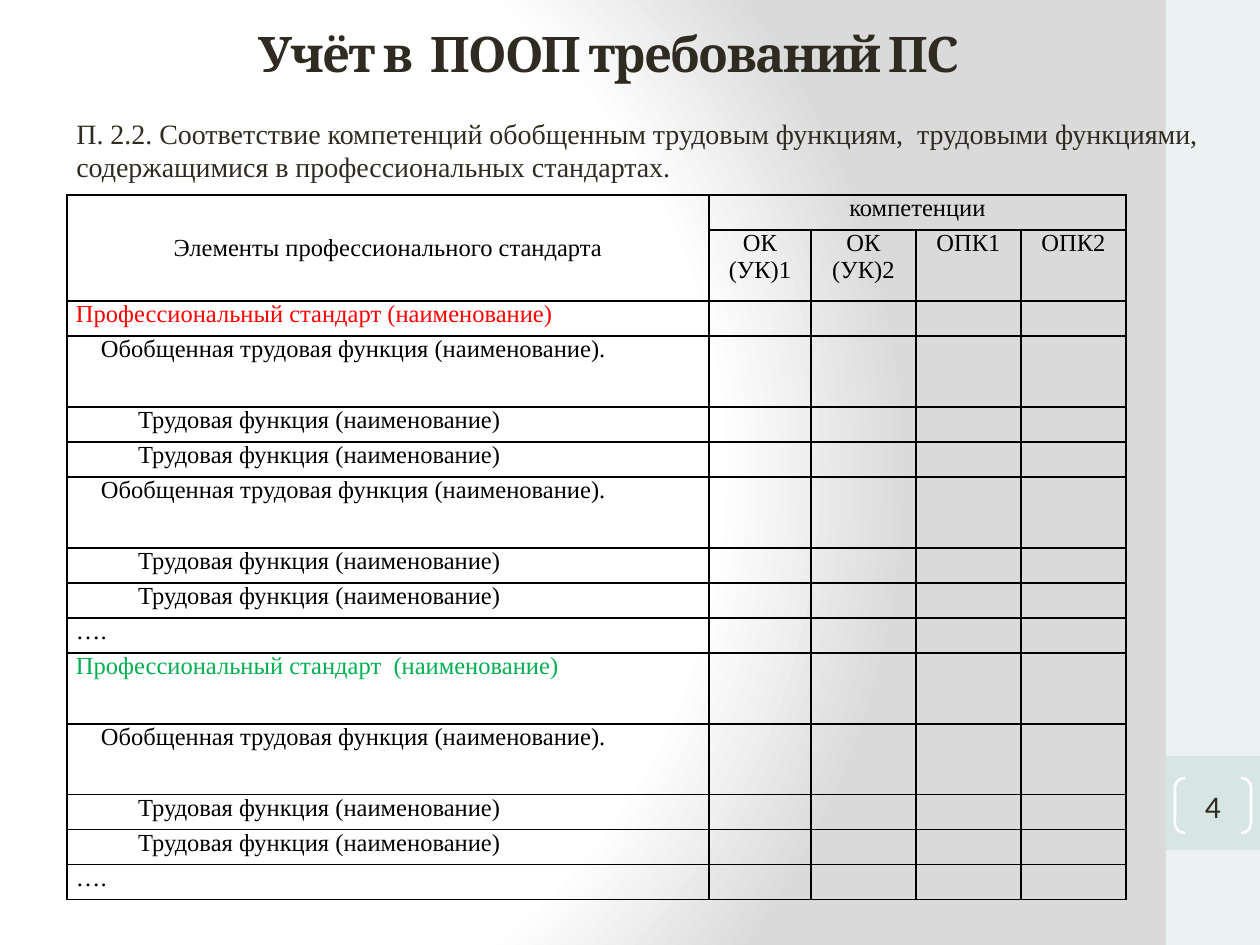
"""Build the slide that maps professional standards to competencies."""
from pptx import Presentation
from pptx.dml.color import RGBColor
from pptx.enum.shapes import MSO_SHAPE as SHAPE
from pptx.enum.text import MSO_ANCHOR as ANCHOR, PP_ALIGN as ALIGN
from pptx.oxml import parse_xml
from pptx.oxml.ns import nsdecls, qn
from pptx.util import Pt

PX = 914400 / 126


def px(*lengths):
    return [round(length * PX) for length in lengths]


def style(paragraph, name, size, color, align=ALIGN.LEFT):
    paragraph.alignment = align
    paragraph.font.name = name
    paragraph.font.size = Pt(size)
    paragraph.font.color.rgb = RGBColor.from_string(color)


presentation = Presentation()
presentation.slide_width, presentation.slide_height = px(1260, 945)
slide = presentation.slides.add_slide(presentation.slide_layouts[6])

slide.background.fill.gradient()
gradient = slide.element.find(".//" + qn("a:gradFill"))
stops = "".join(
    f'<a:gs pos="{position}000"><a:srgbClr val="{color}"/></a:gs>'
    for position, color in ((0, "FFFFFF"), (75, "FFFFFF"), (100, "DADADA"))
)
gradient.getparent().replace(gradient, parse_xml(
    f'<a:gradFill {nsdecls("a")} rotWithShape="1"><a:gsLst>{stops}</a:gsLst>'
    '<a:path path="circle"><a:fillToRect l="20000" t="50000" r="100000" b="50000"/></a:path>'
    '</a:gradFill>'
))

for top, height, color in ((0, 945, "EBF2F1"), (756, 94, "D7E5E4")):
    band = slide.shapes.add_shape(SHAPE.RECTANGLE, *px(1166, top, 94, height))
    band.shadow.inherit = False
    band.fill.solid()
    band.fill.fore_color.rgb = RGBColor.from_string(color)
    band.line.fill.background()

title = slide.shapes.add_textbox(*px(84, -8, 1050, 121)).text_frame
title.word_wrap = True
title.vertical_anchor = ANCHOR.MIDDLE
paragraph = title.paragraphs[0]
run = paragraph.add_run()
run.text = "Учёт в  ПООП требований ПС"
style(paragraph, "Cambria", 28, "2F2B20", ALIGN.CENTER)
paragraph.font.bold = True
run.font._element.set("spc", "-100")

bracket = slide.shapes.add_shape(SHAPE.DOUBLE_BRACKET, *px(1175, 778, 76, 55))
bracket.shadow.inherit = False
bracket.adjustments[0] = 0.18
bracket.fill.background()
bracket.line.color.rgb = RGBColor.from_string("FFFFFF")
bracket.line.width = Pt(1.5)
number = bracket.text_frame
number.margin_left = number.margin_right = number.margin_top = number.margin_bottom = 0
number.vertical_anchor = ANCHOR.MIDDLE
number.text = "4"
style(number.paragraphs[0], "Calibri", 18, "2F2B20", ALIGN.CENTER)

GENERAL = ("Обобщенная трудовая функция (наименование).", 25, "000000", 71)
FUNCTION = ("Трудовая функция (наименование)", 62, "000000", 35)
MORE = ("….", 0, "000000", 35)
block = [GENERAL, FUNCTION, FUNCTION]
elements = [
    ("Профессиональный стандарт (наименование)", 0, "FF0000", 35),
    *block, *block, MORE,
    ("Профессиональный стандарт  (наименование)", 0, "00B050", 71),
    *block, MORE,
]
widths = [642, 102, 105, 105, 105]
heights = [35, 71] + [element[3] for element in elements]
frame = slide.shapes.add_table(
    len(heights), len(widths), *px(67, 195, sum(widths), sum(heights)))
table = frame.table
table.first_row = table.horz_banding = False
for column, width in zip(table.columns, px(*widths)):
    column.width = width
for row, height in zip(table.rows, px(*heights)):
    row.height = height

table.cell(0, 0).merge(table.cell(1, 0))
table.cell(0, 1).merge(table.cell(0, 4))
table.cell(0, 0).text = "Элементы профессионального стандарта"
table.cell(0, 0).vertical_anchor = ANCHOR.MIDDLE
table.cell(0, 1).text = "компетенции"
for index, competency in enumerate(("ОК (УК)1", "ОК (УК)2", "ОПК1", "ОПК2"), 1):
    table.cell(1, index).text = competency

for cell in table.iter_cells():
    cell.margin_left, cell.margin_right = px(9, 9)
    cell.margin_top = cell.margin_bottom = 0
    style(cell.text_frame.paragraphs[0], "Times New Roman", 14, "000000", ALIGN.CENTER)
    properties = cell._tc.get_or_add_tcPr()
    for side in ("lnL", "lnR", "lnT", "lnB"):
        properties.append(parse_xml(
            f'<a:{side} {nsdecls("a")} w="12700"><a:solidFill>'
            f'<a:srgbClr val="000000"/></a:solidFill></a:{side}>'))
    cell.fill.background()

for index, (text, indent, color, height) in enumerate(elements, 2):
    cell = table.cell(index, 0)
    cell.text = text
    paragraph = cell.text_frame.paragraphs[0]
    style(paragraph, "Times New Roman", 14, color, ALIGN.JUSTIFY)
    paragraph._p.get_or_add_pPr().set("indent", str(px(indent)[0]))

clause = slide.shapes.add_textbox(*px(64, 110, 1155, 84)).text_frame
clause.word_wrap = True
clause.text = ("П. 2.2. Соответствие компетенций обобщенным трудовым функциям,  трудовыми "
               "функциями, содержащимися в профессиональных стандартах.")
style(clause.paragraphs[0], "Times New Roman", 16, "2F2B20")

presentation.save("out.pptx")
